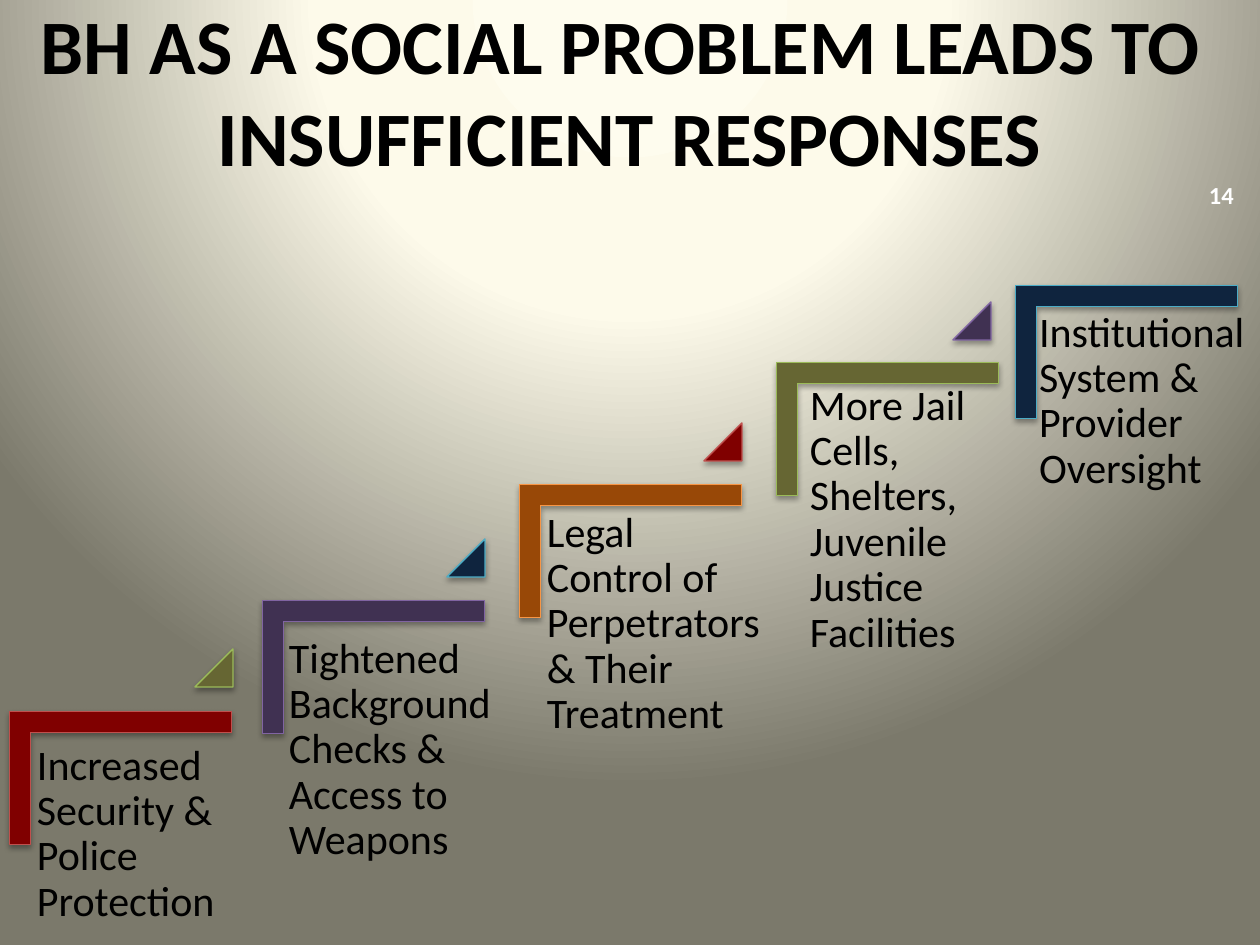
"""Build a staircase slide of five insufficient responses to a social problem."""
import pptx
import pptx.dml.color
import pptx.enum.shapes
import pptx.enum.text
import pptx.oxml
import pptx.oxml.ns
import pptx.util
from dataclasses import dataclass

SCALE = 914400 // 126
SLIDE_WIDTH, SLIDE_HEIGHT = 1260, 945
BRACKET_WIDTH, BRACKET_HEIGHT, BRACKET_THICKNESS = 133, 222, 0.16
TRIANGLE_SIZE = 38
INSET = 12
NAMESPACE = pptx.oxml.ns.nsdecls("a", "p")


@dataclass(frozen=True)
class Theme:
    font: str = "Calibri"
    text: str = "000000"
    number: str = "FFFFFF"
    title_size: int = 44
    body_size: int = 24
    number_size: int = 14
    outline: float = 0.75
    background: tuple = ((0, "FEFCEE"), (40, "FDFAEA"), (100, "7B796B"))
    red: tuple = ("800000", "C0504D")
    purple: tuple = ("403152", "8064A2")
    orange: tuple = ("984807", "F79646")
    olive: tuple = ("666633", "9BBB59")
    navy: tuple = ("0F243E", "4BACC6")


theme = Theme()
deck = pptx.Presentation()
deck.slide_width = SLIDE_WIDTH * SCALE
deck.slide_height = SLIDE_HEIGHT * SCALE
page = deck.slides.add_slide(deck.slide_layouts[6])


def add_text(text, frame, size=theme.body_size, color=theme.text, bold=False,
             align=pptx.enum.text.PP_ALIGN.LEFT, anchor=pptx.enum.text.MSO_ANCHOR.TOP,
             line_spacing=1.0):
    box = page.shapes.add_textbox(*(length * SCALE for length in frame))
    body = box.text_frame
    body.word_wrap = True
    body.vertical_anchor = anchor
    body.margin_left = body.margin_top = body.margin_right = body.margin_bottom = INSET * SCALE
    body.text = text
    for para in body.paragraphs:
        para.alignment = align
        para.line_spacing = line_spacing
        for span in para.runs:
            span.font.name = theme.font
            span.font.size = pptx.util.Pt(size)
            span.font.bold = bold
            span.font.color.rgb = pptx.dml.color.RGBColor.from_string(color)


def add_marker(kind, frame, colors, adjustments, rotation=0):
    marker = page.shapes.add_shape(kind, *(length * SCALE for length in frame))
    marker.rotation = rotation
    for index, value in enumerate(adjustments):
        marker.adjustments[index] = value
    fill_color, line_color = colors
    marker.fill.solid()
    marker.fill.fore_color.rgb = pptx.dml.color.RGBColor.from_string(fill_color)
    marker.line.color.rgb = pptx.dml.color.RGBColor.from_string(line_color)
    marker.line.width = pptx.util.Pt(theme.outline)
    marker.shadow.inherit = False
    effects = marker._element.spPr.find(pptx.oxml.ns.qn("a:effectLst"))
    effects.append(pptx.oxml.parse_xml(
        f'<a:outerShdw {NAMESPACE} blurRad="40000" dist="23000" dir="5400000" rotWithShape="0">'
        '<a:srgbClr val="000000"><a:alpha val="35000"/></a:srgbClr></a:outerShdw>'))


stops = "".join(f'<a:gs pos="{position * 1000}"><a:srgbClr val="{color}"/></a:gs>'
                for position, color in theme.background)
page._element.cSld.insert(0, pptx.oxml.parse_xml(
    f'<p:bg {NAMESPACE}><p:bgPr><a:gradFill rotWithShape="1"><a:gsLst>{stops}</a:gsLst>'
    '<a:path path="circle"><a:fillToRect l="50000" t="-80000" r="50000" b="180000"/></a:path>'
    '</a:gradFill><a:effectLst/></p:bgPr></p:bg>'))

add_text("14", (1197, 179, 63, 32), size=theme.number_size, color=theme.number, bold=True,
         anchor=pptx.enum.text.MSO_ANCHOR.MIDDLE)
add_text("BH AS A SOCIAL PROBLEM LEADS TO \vINSUFFICIENT RESPONSES", (0, 0, SLIDE_WIDTH, 179),
         size=theme.title_size, bold=True, align=pptx.enum.text.PP_ALIGN.CENTER,
         anchor=pptx.enum.text.MSO_ANCHOR.MIDDLE)

steps = [
    ("Increased Security & Police Protection", (25, 732, 214, 176),
     (54, 667), theme.red, (195, 649), theme.olive),
    ("Tightened Background Checks & Access to Weapons", (277, 625, 228, 273),
     (307, 556), theme.purple, (447, 539), theme.navy),
    ("Legal\nControl of Perpetrators & Their Treatment", (535, 499, 255, 286),
     (564, 440), theme.orange, (704, 423), theme.red),
    ("More Jail Cells, Shelters, Juvenile Justice Facilities", (798, 372, 208, 295),
     (821, 318), theme.olive, (953, 302), theme.purple),
    ("Institutional System & Provider Oversight", (1027, 299, 233, 203),
     (1060, 241), theme.navy, None, None),
]
for label, label_frame, bracket_corner, bracket_colors, triangle_corner, triangle_colors in steps:
    add_marker(pptx.enum.shapes.MSO_SHAPE.CORNER,
               (*bracket_corner, BRACKET_WIDTH, BRACKET_HEIGHT), bracket_colors,
               (BRACKET_THICKNESS, BRACKET_THICKNESS), rotation=90)
    add_text(label, label_frame, line_spacing=0.9)
    if triangle_corner:
        add_marker(pptx.enum.shapes.MSO_SHAPE.ISOSCELES_TRIANGLE,
                   (*triangle_corner, TRIANGLE_SIZE, TRIANGLE_SIZE), triangle_colors, (1,))

deck.save("out.pptx")
